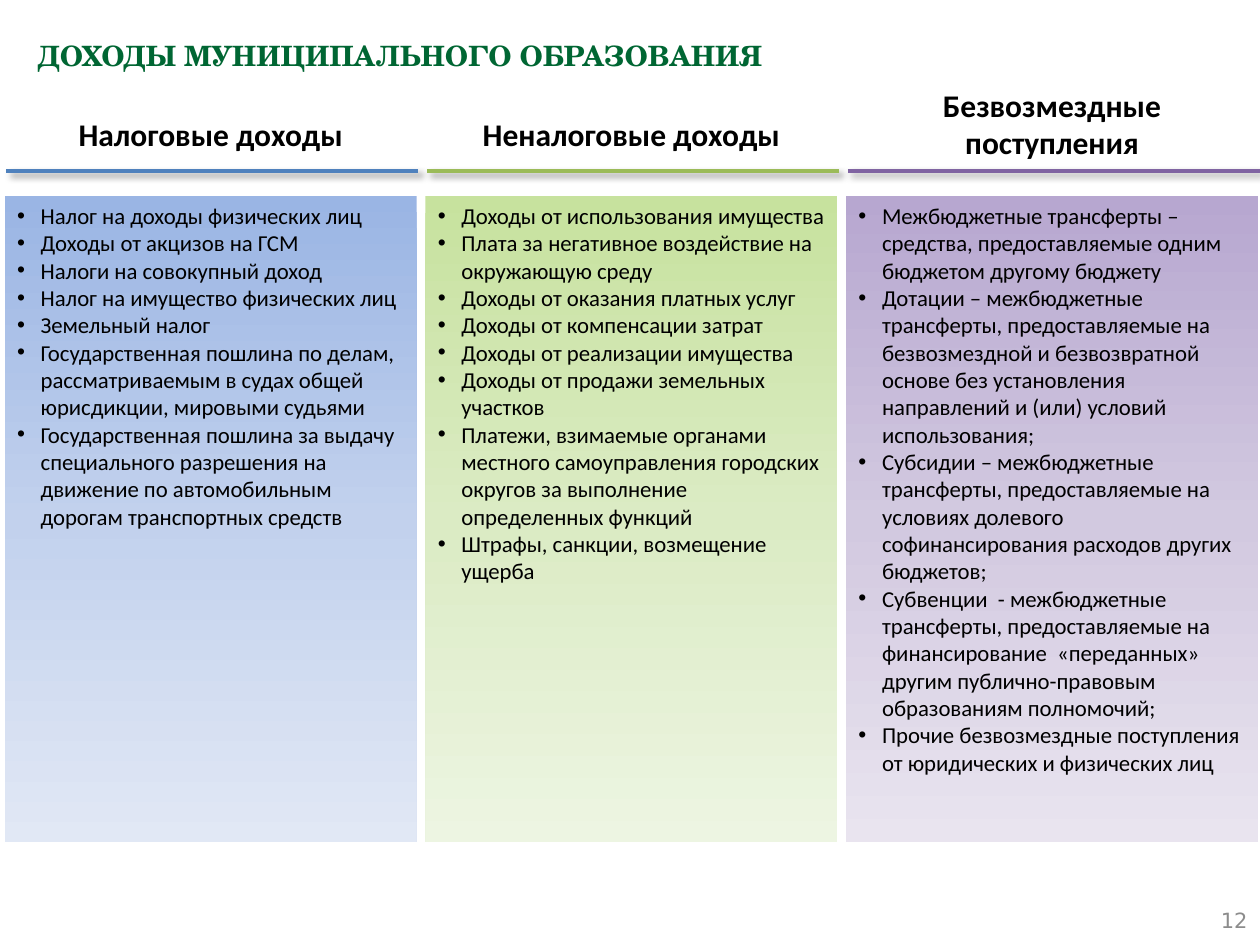
from copy import deepcopy

from lxml import etree
from pptx import Presentation
from pptx.dml.color import RGBColor
from pptx.enum.shapes import MSO_CONNECTOR, MSO_SHAPE
from pptx.enum.text import MSO_ANCHOR, PP_ALIGN
from pptx.oxml import parse_xml
from pptx.oxml.ns import nsdecls, qn
from pptx.util import Pt

LEFT, CENTER, RIGHT = PP_ALIGN.LEFT, PP_ALIGN.CENTER, PP_ALIGN.RIGHT
TOP, MIDDLE = MSO_ANCHOR.TOP, MSO_ANCHOR.MIDDLE
RECTANGLE, STRAIGHT = MSO_SHAPE.RECTANGLE, MSO_CONNECTOR.STRAIGHT

GREEN = RGBColor(0x00, 0x66, 0x33)
GRAY = RGBColor(0x8C, 0x8C, 0x8C)
BLACK = RGBColor(0x00, 0x00, 0x00)
BLUE_LINE = RGBColor(0x4F, 0x81, 0xBD)
LIME_LINE = RGBColor(0x9B, 0xBB, 0x59)
PURPLE_LINE = RGBColor(0x80, 0x64, 0xA2)
BLUES = [RGBColor(0x9A, 0xB5, 0xE4), RGBColor(0xC2, 0xD1, 0xED), RGBColor(0xE1, 0xE8, 0xF5)]
LIMES = [RGBColor(0xC7, 0xE2, 0x9E), RGBColor(0xDB, 0xEB, 0xC4), RGBColor(0xED, 0xF5, 0xE2)]
PURPLES = [RGBColor(0xB7, 0xA7, 0xD0), RGBColor(0xD2, 0xC9, 0xE0), RGBColor(0xE9, 0xE4, 0xEF)]

COLUMN_STEP = 240.4
COLUMN_WIDTH = 235.4
INDENT = Pt(13.5)
SHADOW = (
    f'<a:effectLst {nsdecls("a")}><a:outerShdw blurRad="{Pt(4)}" dist="{Pt(3)}" '
    'dir="2700000" algn="tl" rotWithShape="0"><a:srgbClr val="000000">'
    '<a:alpha val="40000"/></a:srgbClr></a:outerShdw></a:effectLst>'
)

columns = [
    (["Налоговые доходы"], 190, BLUE_LINE, BLUES, [
        "Налог на доходы физических лиц",
        "Доходы от акцизов на ГСМ",
        "Налоги на совокупный доход",
        "Налог на имущество физических лиц",
        "Земельный налог",
        "Государственная пошлина по делам, рассматриваемым в судах общей юрисдикции, "
        "мировыми судьями",
        "Государственная пошлина за выдачу специального разрешения на движение по "
        "автомобильным дорогам транспортных средств",
    ]),
    (["Неналоговые доходы"], 211, LIME_LINE, LIMES, [
        "Доходы от использования имущества",
        "Плата за негативное воздействие на окружающую среду",
        "Доходы от оказания платных услуг",
        "Доходы от компенсации затрат",
        "Доходы от реализации имущества",
        "Доходы от продажи земельных участков",
        "Платежи, взимаемые органами местного самоуправления городских округов за "
        "выполнение определенных функций",
        "Штрафы, санкции, возмещение ущерба",
    ]),
    (["Безвозмездные", "поступления"], 163, PURPLE_LINE, PURPLES, [
        "Межбюджетные трансферты – средства, предоставляемые одним бюджетом другому бюджету",
        "Дотации – межбюджетные трансферты, предоставляемые на безвозмездной и "
        "безвозвратной основе без установления направлений и (или) условий использования;",
        "Субсидии – межбюджетные трансферты, предоставляемые на условиях долевого "
        "софинансирования расходов других бюджетов;",
        "Субвенции  - межбюджетные трансферты, предоставляемые на финансирование  "
        "«переданных» другим публично-правовым образованиям полномочий;",
        "Прочие безвозмездные поступления от юридических и физических лиц",
    ]),
]


def write(tf, lines, name, size, color, bold=False, align=LEFT, bullets=False):
    for i, line in enumerate(lines):
        p = tf.paragraphs[0] if i == 0 else tf.add_paragraph()
        p.alignment = align
        if bullets:
            pPr = p._p.get_or_add_pPr()
            pPr.set("marL", str(INDENT))
            pPr.set("indent", str(-INDENT))
            etree.SubElement(pPr, qn("a:buFont"), typeface="Arial")
            etree.SubElement(pPr, qn("a:buChar"), char="•")
        r = p.add_run()
        r.text = line
        for key, value in {"name": name, "size": Pt(size), "bold": bold}.items():
            setattr(r.font, key, value)
        r.font.color.rgb = color


prs = Presentation()
prs.slide_width, prs.slide_height = Pt(720), Pt(540)
s = prs.slides.add_slide(prs.slide_layouts[5])

title = s.shapes.title
title.left, title.top, title.width, title.height = Pt(14.4), Pt(14.4), Pt(692), Pt(57)
title.text_frame.vertical_anchor = TOP
write(title.text_frame, ["ДОХОДЫ МУНИЦИПАЛЬНОГО ОБРАЗОВАНИЯ"],
      "TeX Gyre Schola", 16, GREEN, bold=True)
title.text_frame.paragraphs[0].line_spacing = 1.2

number = s.shapes.add_textbox(Pt(552), Pt(511), Pt(168), Pt(29))
number.text_frame.vertical_anchor = MIDDLE
write(number.text_frame, ["12"], "DejaVu Sans", 12, GRAY, align=RIGHT)

for i, (heading, heading_width, line_color, shades, items) in enumerate(columns):
    left = 2.7 + i * COLUMN_STEP

    panel = s.shapes.add_shape(RECTANGLE, Pt(left), Pt(111.8), Pt(COLUMN_WIDTH), Pt(369.5))
    panel.shadow.inherit = False
    panel.line.fill.background()
    panel.fill.gradient()
    panel.fill.gradient_angle = 270
    last_stop = panel._element.spPr.findall(".//" + qn("a:gs"))[-1]
    last_stop.addprevious(deepcopy(last_stop))
    for stop, position, shade in zip(panel.fill.gradient_stops, (0, 0.5, 1), shades):
        stop.position = position
        stop.color.rgb = shade
    tf = panel.text_frame
    tf.word_wrap = True
    tf.vertical_anchor = TOP
    write(tf, items, "Calibri", 13, BLACK, bullets=True)

    rule = s.shapes.add_connector(STRAIGHT, Pt(left + 1), Pt(97.9),
                                  Pt(left + 1 + COLUMN_WIDTH), Pt(97.9))
    rule.line.color.rgb = line_color
    rule.line.width = Pt(2.25)
    rule._element.spPr.append(parse_xml(SHADOW))

    top, height = (62, 29) if len(heading) == 1 else (45.4, 51)
    center = left + COLUMN_WIDTH / 2
    label = s.shapes.add_textbox(Pt(center - heading_width / 2), Pt(top),
                                 Pt(heading_width), Pt(height))
    label.text_frame.word_wrap = False
    write(label.text_frame, heading, "Calibri", 18, BLACK, bold=True, align=CENTER)

prs.save("out.pptx")
